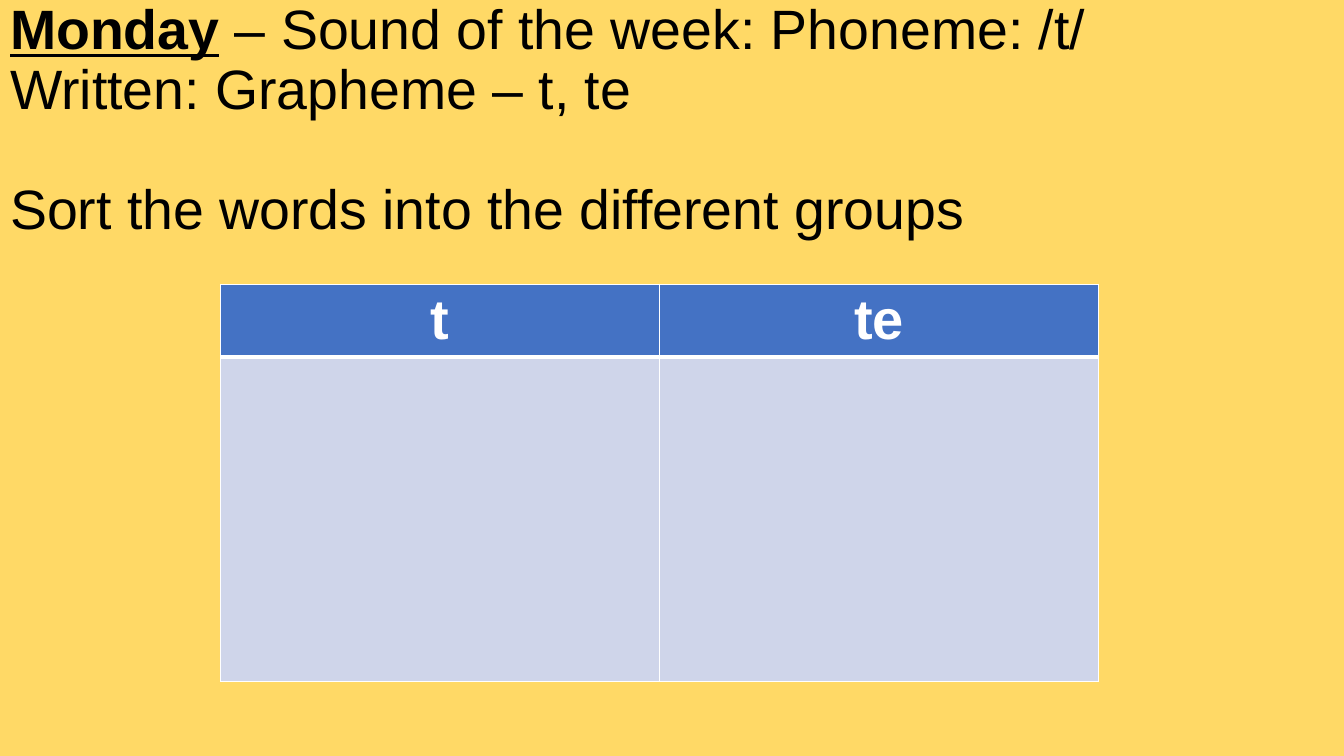
"""Build a phonics slide with a two-column word sorting table."""
import dataclasses

import lxml.etree
import pptx
import pptx.dml.color
import pptx.enum.text
import pptx.oxml.ns
import pptx.util

SLIDE_WIDTH = pptx.util.Inches(13.33)
SLIDE_HEIGHT = pptx.util.Inches(7.5)
FONT = "Arial"
SUNNY = pptx.dml.color.RGBColor(0xFF, 0xD9, 0x66)
BLACK = pptx.dml.color.RGBColor(0x00, 0x00, 0x00)
WHITE = pptx.dml.color.RGBColor(0xFF, 0xFF, 0xFF)
HEADER_BLUE = pptx.dml.color.RGBColor(0x44, 0x72, 0xC4)
BODY_BLUE = pptx.dml.color.RGBColor(0xCF, 0xD5, 0xEA)
HEADING_SIZE = 39.6
GRAPHEME_SIZE = 40
INSTRUCTION_GAP = 43


@dataclasses.dataclass(frozen=True)
class Area:
    """A rectangle in percent of the slide's width and height."""
    left: float
    top: float
    width: float
    height: float

    def lengths(self) -> tuple[int, int, int, int]:
        """Return left, top, width and height as slide lengths."""
        return (across(self.left), down(self.top),
                across(self.width), down(self.height))


@dataclasses.dataclass(frozen=True)
class SortRow:
    """One table row with its height in percent and its border weights."""
    words: tuple[str, str]
    height: float
    fill: pptx.dml.color.RGBColor
    top_line: float
    bottom_line: float


HEADING_AREA = Area(0, 6.4, 86.27, 19.33)
SORT_ROWS = (
    SortRow(("t", "te"), 9.47, HEADER_BLUE, 1, 3),
    SortRow(("", ""), 42.9, BODY_BLUE, 3, 1),
)
SORT_AREA = Area(16.43, 37.6, 65.3, sum(row.height for row in SORT_ROWS))


def across(percent: float) -> int:
    """Turn a percentage of the slide's width into a length."""
    return round(SLIDE_WIDTH * percent / 100)


def down(percent: float) -> int:
    """Turn a percentage of the slide's height into a length."""
    return round(SLIDE_HEIGHT * percent / 100)


def style_font(font, size: float, color: pptx.dml.color.RGBColor, bold: bool) -> None:
    """Apply the slide's typeface with a size, colour and weight."""
    font.name = FONT
    font.size = pptx.util.Pt(size)
    font.color.rgb = color
    font.bold = bold


def write_heading(slide) -> None:
    """Fill the title placeholder with the sound and the task."""
    heading = slide.shapes.title
    heading.left, heading.top, heading.width, heading.height = HEADING_AREA.lengths()
    frame = heading.text_frame
    frame.word_wrap = True
    frame.auto_size = pptx.enum.text.MSO_AUTO_SIZE.NONE
    frame.vertical_anchor = pptx.enum.text.MSO_ANCHOR.MIDDLE
    sound = frame.paragraphs[0]
    sound.text = "Monday"
    sound.add_run().text = " – Sound of the week: Phoneme: /t/ Written: Grapheme – t, te"
    task = frame.add_paragraph()
    task.text = "Sort the words into the different groups"
    for paragraph in frame.paragraphs:
        paragraph.alignment = pptx.enum.text.PP_ALIGN.LEFT
        paragraph.line_spacing = 0.9
        paragraph.space_before = pptx.util.Pt(0)
        for run in paragraph.runs:
            style_font(run.font, HEADING_SIZE, BLACK, False)
    task.space_before = pptx.util.Pt(INSTRUCTION_GAP)
    day = sound.runs[0].font
    day.bold = True
    day.underline = True


def draw_borders(cell, row: SortRow) -> None:
    """Give a cell white lines ahead of its fill."""
    properties = cell._tc.get_or_add_tcPr()
    weights = {"lnL": 1, "lnR": 1, "lnT": row.top_line, "lnB": row.bottom_line}
    for position, (side, weight) in enumerate(weights.items()):
        line = lxml.etree.Element(pptx.oxml.ns.qn(f"a:{side}"), w=str(pptx.util.Pt(weight)))
        fill = lxml.etree.SubElement(line, pptx.oxml.ns.qn("a:solidFill"))
        lxml.etree.SubElement(fill, pptx.oxml.ns.qn("a:srgbClr"), val=str(WHITE))
        properties.insert(position, line)


def add_sorting_table(slide) -> None:
    """Add the table with one column for each grapheme."""
    columns = len(SORT_ROWS[0].words)
    table = slide.shapes.add_table(len(SORT_ROWS), columns, *SORT_AREA.lengths()).table
    for row_index, row in enumerate(SORT_ROWS):
        table.rows[row_index].height = down(row.height)
        for column, word in enumerate(row.words):
            cell = table.cell(row_index, column)
            cell.fill.solid()
            cell.fill.fore_color.rgb = row.fill
            draw_borders(cell, row)
            paragraph = cell.text_frame.paragraphs[0]
            paragraph.alignment = pptx.enum.text.PP_ALIGN.CENTER
            if word:
                paragraph.text = word
                style_font(paragraph.runs[0].font, GRAPHEME_SIZE, WHITE, True)


def main() -> None:
    """Build and save the slide."""
    presentation = pptx.Presentation()
    presentation.slide_width = SLIDE_WIDTH
    presentation.slide_height = SLIDE_HEIGHT
    slide = presentation.slides.add_slide(presentation.slide_layouts.get_by_name("Title Only"))
    slide.background.fill.solid()
    slide.background.fill.fore_color.rgb = SUNNY
    write_heading(slide)
    add_sorting_table(slide)
    presentation.save("out.pptx")


if __name__ == "__main__":
    main()
